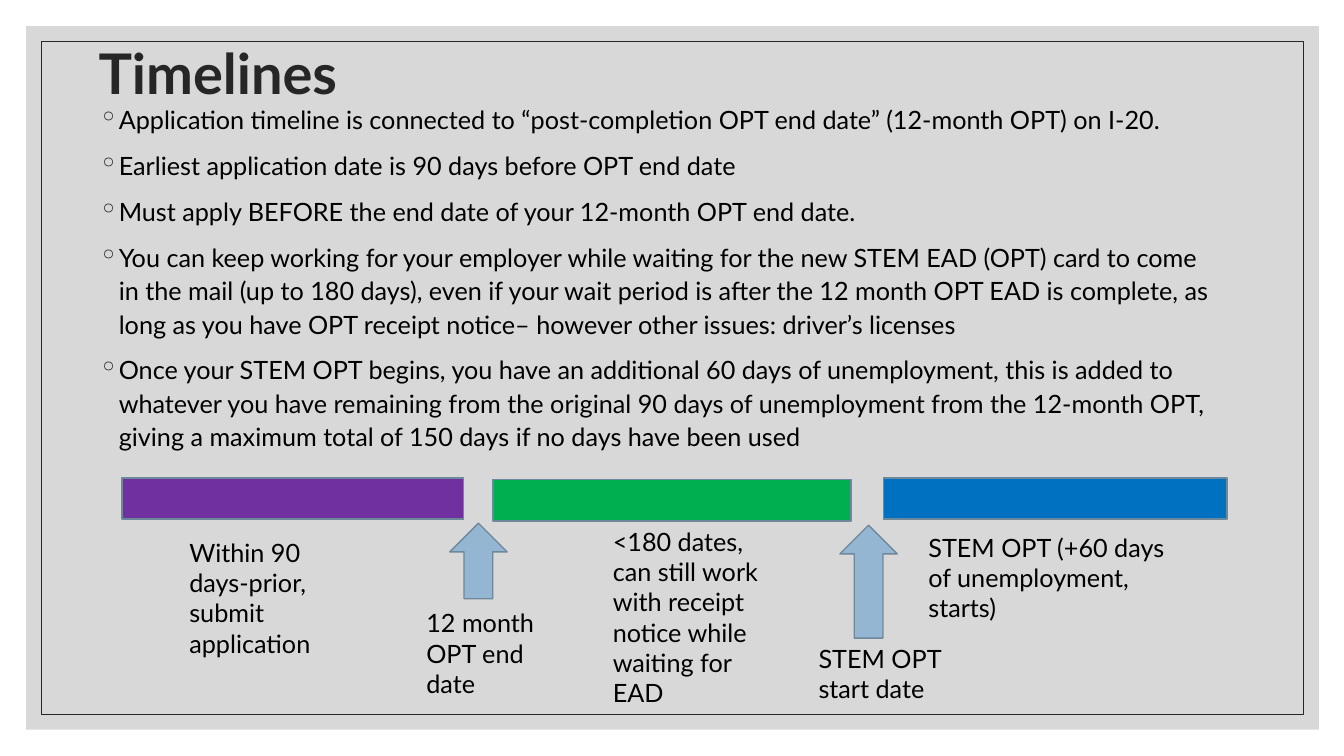
from lxml import etree
from pptx import Presentation
from pptx.dml.color import RGBColor
from pptx.enum.shapes import MSO_SHAPE as SHAPE
from pptx.enum.text import MSO_ANCHOR as ANCHOR, MSO_AUTO_SIZE as AUTO_SIZE
from pptx.oxml.ns import qn
from pptx.util import Inches, Pt

COLORS = {
    "panel": "BFBFBF", "dark": "262626", "text": "000000",
    "purple": "7030A0", "green": "00B050", "blue": "0070C0",
    "arrow": "94B6D2", "edge": "6D879B",
}
FONT = "Lato"

BULLETS = [
    "Application timeline is connected to “post-completion OPT end date” (12-month OPT) on I-20.",
    "Earliest application date is 90 days before OPT end date",
    "Must apply BEFORE the end date of your 12-month OPT end date.",
    "You can keep working for your employer while waiting for the new STEM EAD (OPT) card "
    "to come in the mail (up to 180 days), even if your wait period is after the 12 month "
    "OPT EAD is complete, as long as you have OPT receipt notice– however other issues: "
    "driver’s licenses",
    "Once your STEM OPT begins, you have an additional 60 days of unemployment, this is added "
    "to whatever you have remaining from the original 90 days of unemployment from the "
    "12-month OPT, giving a maximum total of 150 days if no days have been used",
]

# Positions below are relative to the timeline box: left, top, width, height.
BARS = [
    ("purple", (0, 0, 3.39, 0.41)),
    ("green", (3.68, 0.02, 3.55, 0.41)),
    ("blue", (7.55, 0, 3.41, 0.41)),
]
ARROWS = [(7.12, 0.47, 0.57, 1.12), (3.25, 0.45, 0.57, 0.75)]
LABELS = [
    ("Within 90 days-prior, submit application", (0.57, 0.54, 1.93, 1.31)),
    ("<180 dates, can still work with receipt notice while waiting for EAD",
     (4.77, 0.43, 1.93, 1.92)),
    ("STEM OPT (+60 days of unemployment, starts)", (7.9, 0.49, 2.6, 1.01)),
    ("STEM OPT start date", (6.81, 1.59, 1.42, 0.71)),
    ("12 month OPT end date", (2.92, 1.24, 1.58, 1.01)),
]


def rgb(name):
    return RGBColor.from_string(COLORS[name])


def inches(box):
    return [Inches(v) for v in box]


def add_box(s, kind, box, fill=None, line=None, width=1):
    sp = s.shapes.add_shape(kind, *inches(box))
    sp.shadow.inherit = False
    if fill:
        sp.fill.solid()
        sp.fill.fore_color.rgb = rgb(fill)
    else:
        sp.fill.background()
    if line:
        sp.line.color.rgb = rgb(line)
        sp.line.width = Pt(width)
    else:
        sp.line.fill.background()
    return sp


def add_text(s, box, paragraphs, size=18, color="text", bold=False,
             anchor=ANCHOR.TOP, spacing=None, before=None, bullet=None, grow=False):
    tf = s.shapes.add_textbox(*inches(box)).text_frame
    tf.word_wrap = True
    tf.vertical_anchor = anchor
    tf.auto_size = AUTO_SIZE.SHAPE_TO_FIT_TEXT if grow else AUTO_SIZE.NONE
    for i, text in enumerate(paragraphs):
        p = tf.add_paragraph() if i else tf.paragraphs[0]
        if spacing:
            p.line_spacing = spacing
        if before:
            p.space_before = Pt(before)
        if bullet:
            add_bullet(p, bullet)
        r = p.add_run()
        r.text = text
        r.font.name = FONT
        r.font.size = Pt(size)
        r.font.bold = bold
        r.font.color.rgb = rgb(color)


def add_bullet(p, char):
    pPr = p._p.get_or_add_pPr()
    pPr.set("marL", str(Inches(0.2)))
    pPr.set("indent", str(-Inches(0.2)))
    clr = etree.SubElement(pPr, qn("a:buClr"))
    etree.SubElement(clr, qn("a:srgbClr")).set("val", COLORS["dark"])
    etree.SubElement(pPr, qn("a:buChar")).set("char", char)


def add_frame(s, x, y, w, h, inset=0.15):
    """Translucent grey panel with a thin outline set inside it."""
    panel = add_box(s, SHAPE.RECTANGLE, (x, y, w, h), fill="panel")
    clr = panel.fill._xPr.find(".//" + qn("a:srgbClr"))
    etree.SubElement(clr, qn("a:alpha")).set("val", "60000")
    inner = (x + inset, y + inset, w - 2 * inset, h - 2 * inset)
    add_box(s, SHAPE.RECTANGLE, inner, line="dark", width=0.5)


def add_heading_and_bullets(s, x, y):
    add_text(s, (x, y, 11, 1.5), ["Timelines"], size=40, color="dark", bold=True,
             anchor=ANCHOR.MIDDLE, spacing=0.9)
    add_text(s, (x, y + 0.95, 11.29, 4.21), BULLETS, spacing=1.1, before=9, bullet="◦")


def add_timeline(s, x, y):
    def place(box):
        left, top, w, h = box
        return x + left, y + top, w, h

    for color, box in BARS:
        add_box(s, SHAPE.RECTANGLE, place(box), fill=color, line="edge")
    for box in ARROWS:
        add_box(s, SHAPE.DOWN_ARROW, place(box), fill="arrow", line="edge").rotation = 180
    for text, box in LABELS:
        add_text(s, place(box), [text], grow=True)


def main():
    prs = Presentation()
    prs.slide_width, prs.slide_height = Inches(13.33), Inches(7.5)
    s = prs.slides.add_slide(prs.slide_layouts[6])
    add_frame(s, 0.26, 0.26, 12.82, 6.98)
    add_heading_and_bullets(s, 0.88, 0.01)
    add_timeline(s, 1.21, 4.74)
    prs.save("out.pptx")


if __name__ == "__main__":
    main()
